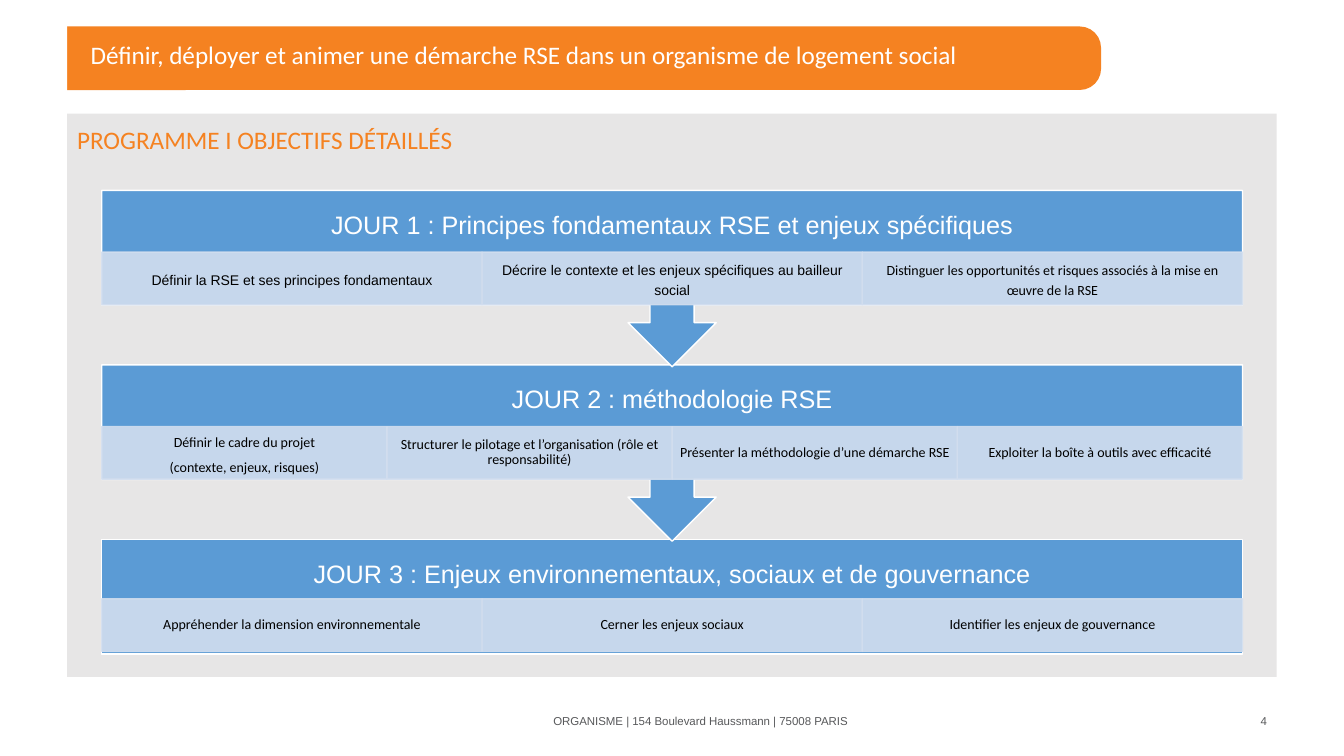
import pptx
import pptx.util
import pptx.dml.color
import pptx.enum.shapes
import pptx.enum.text
import pptx.oxml.ns
from lxml import etree

Pt = pptx.util.Pt
SHAPE = pptx.enum.shapes.MSO_SHAPE
ALIGN = pptx.enum.text.PP_ALIGN
ANCHOR = pptx.enum.text.MSO_ANCHOR
COLORS = {
    "orange": "F58221", "white": "FFFFFF", "panel": "E7E6E6", "grey": "58595B",
    "blue": "5B9BD5", "pale": "D2DEEF", "black": "000000",
}

deck = pptx.Presentation()
deck.slide_width, deck.slide_height = Pt(960), Pt(540)
page = deck.slides.add_slide(deck.slide_layouts[6])


def add_block(kind, left, top, width, height, fill, line=None, alpha=None):
    """Add a filled preset shape, with an optional outline and opacity in percent."""
    box = page.shapes.add_shape(kind, Pt(left), Pt(top), Pt(width), Pt(height))
    box.shadow.inherit = False
    box.fill.solid()
    box.fill.fore_color.rgb = pptx.dml.color.RGBColor.from_string(COLORS[fill])
    if line:
        box.line.color.rgb = pptx.dml.color.RGBColor.from_string(COLORS[line])
        box.line.width = Pt(1)
    else:
        box.line.fill.background()
    if alpha:
        for color in box.element.spPr.iter(pptx.oxml.ns.qn("a:srgbClr")):
            etree.SubElement(color, pptx.oxml.ns.qn("a:alpha"), val=str(alpha * 1000))
    return box


def write(box, text, size=10, font="Calibri", color="black", align=ALIGN.CENTER,
          anchor=ANCHOR.MIDDLE, spacing=1.0, after=0, insets=(7.2, 3.6)):
    """Fill a shape with text, one paragraph per line."""
    frame = box.text_frame
    frame.word_wrap = True
    frame.vertical_anchor = anchor
    frame.margin_left = frame.margin_right = Pt(insets[0])
    frame.margin_top = frame.margin_bottom = Pt(insets[1])
    for index, line in enumerate(text.split("\n")):
        para = frame.add_paragraph() if index else frame.paragraphs[0]
        para.alignment = align
        para.line_spacing = spacing
        para.space_after = Pt(after)
        span = para.add_run()
        span.text = line
        span.font.size = Pt(size)
        span.font.name = font
        span.font.color.rgb = pptx.dml.color.RGBColor.from_string(COLORS[color])


# Title banner, square on its left side
banner = add_block(SHAPE.ROUNDED_RECTANGLE, 6.5, 18.9, 780, 45.4, "orange")
banner.adjustments[0] = 0.336
add_block(SHAPE.RECTANGLE, 0, 11, 48, 63, "white")
title = page.shapes.add_textbox(Pt(57.6), Pt(18.7), Pt(713), Pt(43.2))
write(title, "Définir, déployer et animer une démarche RSE dans un organisme de logement social",
      size=18, color="white", align=ALIGN.LEFT, spacing=0.9)

# Grey panel with its heading
panel = add_block(SHAPE.RECTANGLE, 48, 81.2, 864, 402.3, "panel")
write(panel, "PROGRAMME I OBJECTIFS DÉTAILLÉS", size=18, color="orange",
      align=ALIGN.LEFT, anchor=ANCHOR.TOP, spacing=1.2)

# Days: heading, then cells as (text, font, line spacing)
DAYS = [
    ("JOUR 1 : Principes fondamentaux RSE et enjeux spécifiques", [
        ("Définir la RSE et ses principes fondamentaux", "Arial", 1.2),
        ("Décrire le contexte et les enjeux spécifiques au bailleur social", "Arial", 1.2),
        ("Distinguer les opportunités et risques associés à la mise en œuvre de la RSE",
         "Calibri", 1.2),
    ]),
    ("JOUR 2 : méthodologie RSE", [
        ("Définir le cadre du projet\n(contexte, enjeux, risques)", "Calibri", 1.2),
        ("Structurer le pilotage et l’organisation (rôle et responsabilité)", "Calibri", 0.9),
        ("Présenter la méthodologie d’une démarche RSE", "Calibri", 0.9),
        ("Exploiter la boîte à outils avec efficacité", "Calibri", 0.9),
    ]),
    ("JOUR 3 : Enjeux environnementaux, sociaux et de gouvernance", [
        ("Appréhender la dimension environnementale", "Calibri", 0.9),
        ("Cerner les enjeux sociaux", "Calibri", 0.9),
        ("Identifier les enjeux de gouvernance", "Calibri", 0.9),
    ]),
]
LEFT, WIDTH, FIRST_TOP, STEP = 72.7, 814.8, 136, 124.6

# Drawn from the last day up, so each arrow tip lies over the next block
for number, (heading, cells) in reversed(list(enumerate(DAYS))):
    top = FIRST_TOP + number * STEP
    is_last = number == len(DAYS) - 1
    kind = SHAPE.RECTANGLE if is_last else SHAPE.DOWN_ARROW_CALLOUT
    add_block(kind, LEFT, top, WIDTH, 82 if is_last else 126, "blue", line="white")
    label = page.shapes.add_textbox(Pt(LEFT), Pt(top), Pt(WIDTH), Pt(44.1))
    write(label, heading, size=18, font="Arial", color="white", spacing=1.2,
          after=6.3, insets=(10, 10))

    cell_width = WIDTH / len(cells)
    cell_top = top + (42.6 if is_last else 44.1)
    for column, (text, font, spacing) in enumerate(cells):
        cell = add_block(SHAPE.RECTANGLE, LEFT + column * cell_width, cell_top,
                         cell_width, 37.6, "pale", line="pale", alpha=90)
        write(cell, text, font=font, spacing=spacing, after=3.5, insets=(5.6, 1))

# Footer and page number
footer = page.shapes.add_textbox(Pt(318), Pt(500.4), Pt(365), Pt(28.8))
write(footer, "ORGANISME | 154 Boulevard Haussmann | 75008 PARIS",
      size=8.2, font="Arial", color="grey")
page_number = page.shapes.add_textbox(Pt(696), Pt(500.4), Pt(216), Pt(28.8))
write(page_number, "4", size=8.2, font="Arial", color="grey", align=ALIGN.RIGHT)

deck.save("out.pptx")
